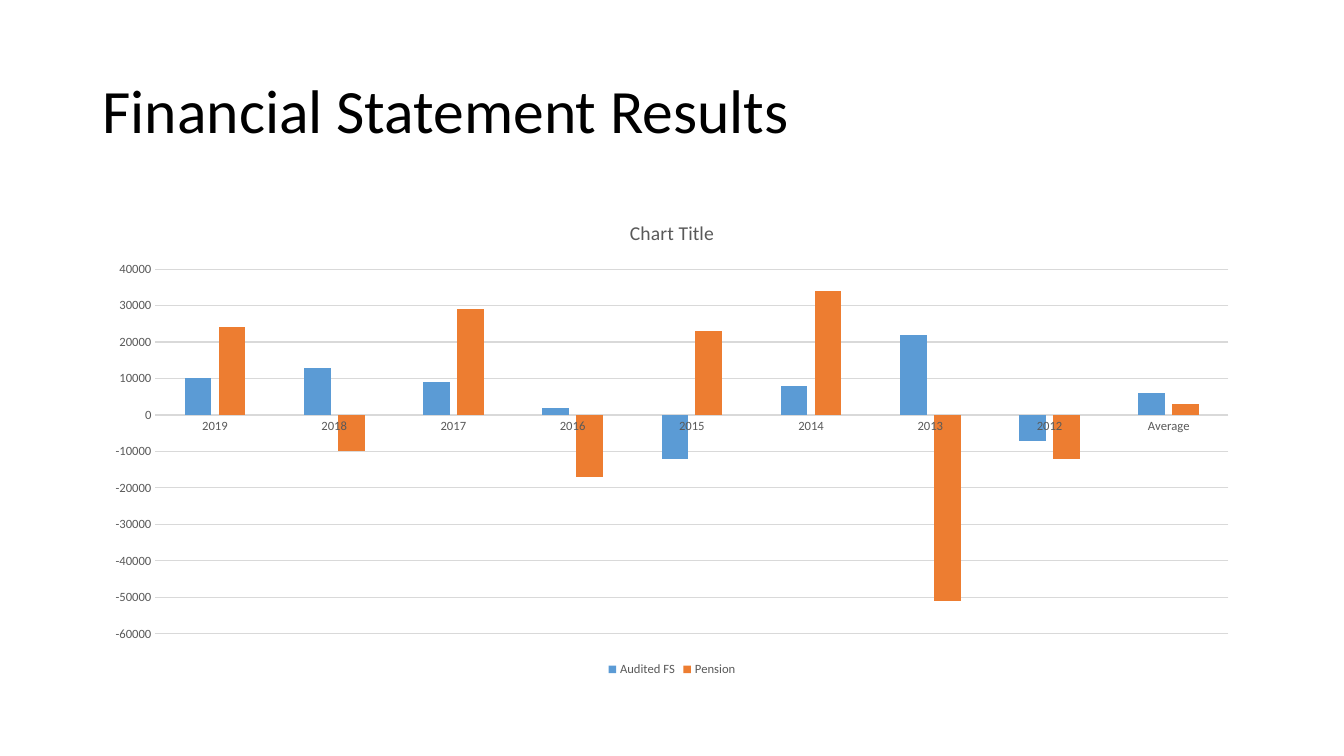
from dataclasses import dataclass

from pptx import Presentation
from pptx.chart.data import CategoryChartData
from pptx.dml.color import RGBColor
from pptx.enum.chart import XL_CHART_TYPE as ChartType
from pptx.enum.chart import XL_LEGEND_POSITION as LegendPos
from pptx.enum.chart import XL_TICK_MARK as TickMark
from pptx.enum.text import MSO_ANCHOR as Anchor
from pptx.enum.text import MSO_AUTO_SIZE as AutoSize
from pptx.enum.text import PP_ALIGN as Align
from pptx.util import Pt


@dataclass(frozen=True)
class Theme:
    font: str = "Calibri"
    black: str = "000000"
    gray: str = "595959"
    rule: str = "D9D9D9"
    bars: tuple = ("5B9BD5", "ED7D31")
    title_size: float = 44
    chart_title_size: float = 14
    chart_size: float = 10
    label_size: float = 9
    rule_width: float = 0.75


THEME = Theme()
LEFT, WIDTH = 66, 828
CATEGORIES = ["2019", "2018", "2017", "2016", "2015", "2014", "2013", "2012", "Average"]
SERIES = {
    "Audited FS": [10000, 13000, 9000, 2000, -12000, 8000, 22000, -7000, 6000],
    "Pension": [24000, -10000, 29000, -17000, 23000, 34000, -51000, -12000, 3000],
}


def style_font(font, size, color):
    font.name = THEME.font
    font.size = Pt(size)
    font.bold = False
    font.color.rgb = RGBColor.from_string(color)


def style_rule(line):
    line.color.rgb = RGBColor.from_string(THEME.rule)
    line.width = Pt(THEME.rule_width)


def set_title(s, text):
    sp = s.shapes.title
    sp.left, sp.top, sp.width, sp.height = Pt(LEFT), Pt(28.75), Pt(WIDTH), Pt(104.4)
    tf = sp.text_frame
    tf.text = text
    tf.word_wrap = True
    tf.auto_size = AutoSize.NONE
    tf.vertical_anchor = Anchor.MIDDLE
    p = tf.paragraphs[0]
    p.alignment = Align.LEFT
    p.line_spacing = 0.9
    style_font(p.runs[0].font, THEME.title_size, THEME.black)


def style_axis(axis):
    axis.major_tick_mark = TickMark.NONE
    axis.minor_tick_mark = TickMark.NONE
    style_font(axis.tick_labels.font, THEME.label_size, THEME.gray)


def style_axes(chart):
    style_axis(chart.category_axis)
    style_rule(chart.category_axis.format.line)
    values = chart.value_axis
    style_axis(values)
    values.minimum_scale, values.maximum_scale = -60000, 40000
    values.major_unit = 10000
    values.format.line.fill.background()
    style_rule(values.major_gridlines.format.line)


def set_chart_title(chart, text):
    tf = chart.chart_title.text_frame
    tf.text = text
    style_font(tf.paragraphs[0].runs[0].font, THEME.chart_title_size, THEME.gray)
    chart.chart_title.include_in_layout = False


def set_legend(chart):
    chart.has_legend = True
    chart.legend.position = LegendPos.BOTTOM
    chart.legend.include_in_layout = False
    style_font(chart.legend.font, THEME.label_size, THEME.gray)


def style_bars(plot):
    plot.gap_width = 219
    plot.overlap = -27
    plot.vary_by_categories = False
    for series, color in zip(plot.series, THEME.bars):
        series.invert_if_negative = False
        series.format.fill.solid()
        series.format.fill.fore_color.rgb = RGBColor.from_string(color)


def add_column_chart(s, title):
    data = CategoryChartData(number_format="General")
    data.categories = CATEGORIES
    for name, values in SERIES.items():
        data.add_series(name, values)
    chart = s.shapes.add_chart(
        ChartType.COLUMN_CLUSTERED, Pt(LEFT), Pt(143.75), Pt(WIDTH), Pt(342.6), data
    ).chart
    style_font(chart.font, THEME.chart_size, THEME.black)
    set_chart_title(chart, title)
    style_axes(chart)
    set_legend(chart)
    style_bars(chart.plots[0])


def main():
    prs = Presentation()
    prs.slide_width, prs.slide_height = Pt(960), Pt(540)
    s = prs.slides.add_slide(prs.slide_layouts[5])
    set_title(s, "Financial Statement Results")
    add_column_chart(s, "Chart Title")
    prs.save("out.pptx")


if __name__ == "__main__":
    main()
